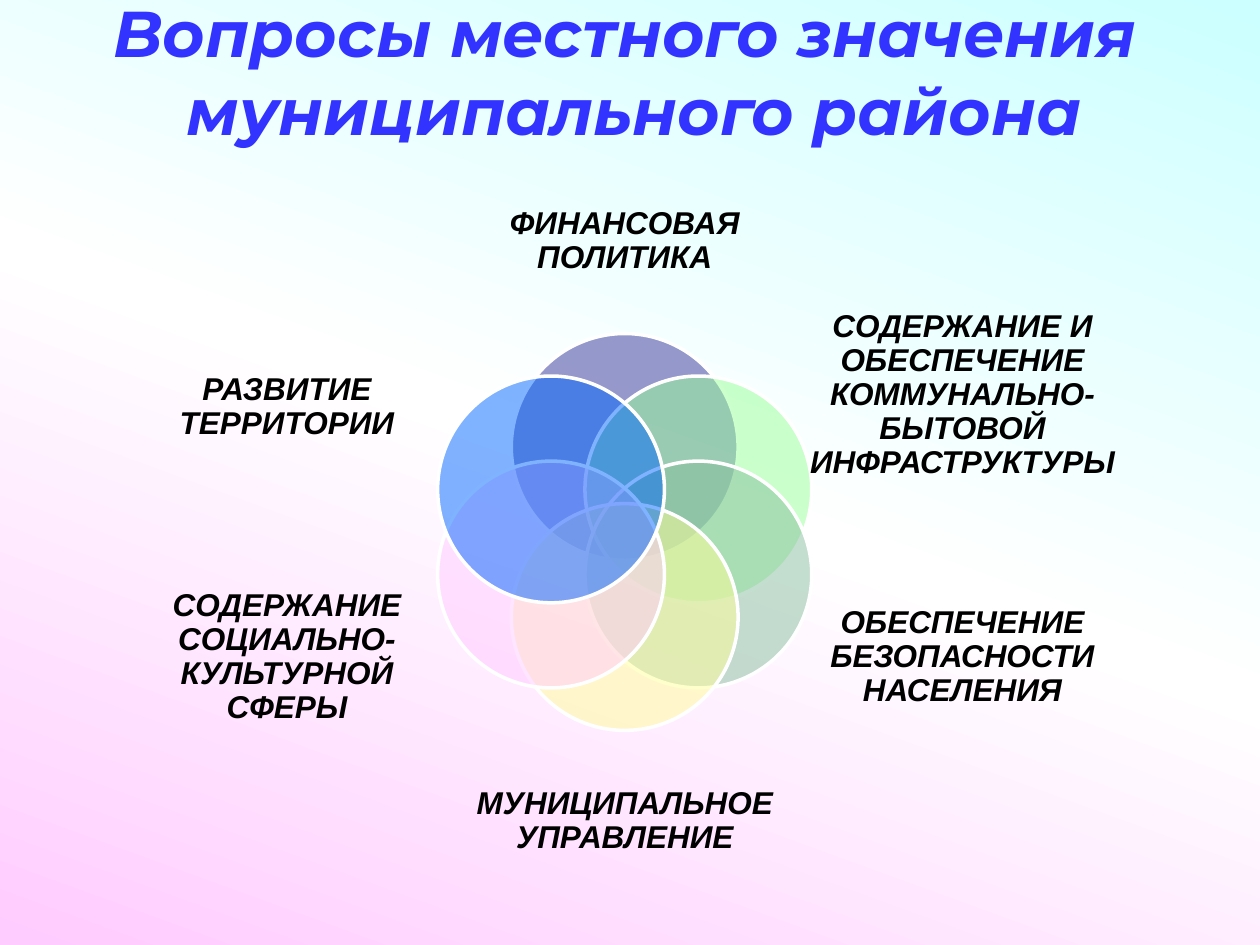
import math
import copy
import pptx
import pptx.util
import pptx.dml.color
import pptx.enum.shapes
import pptx.enum.text
import pptx.oxml
import pptx.oxml.ns

Pt = pptx.util.Pt
SIZE = 129.6
RING = 48.6
SIDE = 193

TOPICS = [
    ("ФИНАНСОВАЯ ПОЛИТИКА", "333399", 0, -166, 162, 88),
    ("СОДЕРЖАНИЕ И ОБЕСПЕЧЕНИЕ КОММУНАЛЬНО-БЫТОВОЙ ИНФРАСТРУКТУРЫ",
     "99FF99", SIDE, -78, 198, 96),
    ("ОБЕСПЕЧЕНИЕ БЕЗОПАСНОСТИ НАСЕЛЕНИЯ", "88BF9E", SIDE, 71.5, 153.4, 108),
    ("МУНИЦИПАЛЬНОЕ УПРАВЛЕНИЕ", "FFFF99", 0, 165.5, 187, 88),
    ("СОДЕРЖАНИЕ СОЦИАЛЬНО-КУЛЬТУРНОЙ СФЕРЫ", "FFCCFF", -SIDE, 71.5, 153.4, 108),
    ("РАЗВИТИЕ ТЕРРИТОРИИ", "0066FF", -SIDE, -71, 153.4, 108),
]


def color(code):
    return pptx.dml.color.RGBColor.from_string(code)


def write(shape, text, size=18, font="Arial", tint="000000", inset=None,
          lead=None, after=None):
    frame = shape.text_frame
    frame.word_wrap = True
    frame.auto_size = pptx.enum.text.MSO_AUTO_SIZE.NONE
    frame.vertical_anchor = pptx.enum.text.MSO_ANCHOR.MIDDLE
    if inset is not None:
        frame.margin_left = frame.margin_right = Pt(inset)
        frame.margin_top = frame.margin_bottom = Pt(inset)
    para = frame.paragraphs[0]
    para.text = text
    para.alignment = pptx.enum.text.PP_ALIGN.CENTER
    para.line_spacing = lead
    para.space_after = after
    for run in para.runs:
        run.font.name = font
        run.font.size = Pt(size)
        run.font.bold = run.font.italic = True
        run.font.color.rgb = color(tint)


def paint(slide):
    fill = slide.background.fill
    fill.gradient()
    stops = slide._element.find(".//" + pptx.oxml.ns.qn("a:gsLst"))
    stops.append(copy.deepcopy(stops[0]))
    for stop, place, code in zip(fill.gradient_stops, (0, 0.5, 1),
                                 ("CCFFFF", "FFFFFF", "FFCCFF")):
        stop.position = place
        stop.color.rgb = color(code)
    fill.gradient_angle = 250


def head(slide, left, top, width, height):
    title = slide.shapes.title
    title.left, title.top = Pt(left), Pt(top)
    title.width, title.height = Pt(width), Pt(height)
    write(title, "Вопросы местного значения\v муниципального района",
          size=37, font="Montserrat", tint="3333FF")


def disc(shapes, x, y, code):
    oval = shapes.add_shape(pptx.enum.shapes.MSO_SHAPE.OVAL, Pt(x - SIZE / 2),
                            Pt(y - SIZE / 2), Pt(SIZE), Pt(SIZE))
    oval.shadow.inherit = False
    oval.fill.solid()
    oval.fill.fore_color.rgb = color(code)
    tone = oval._element.spPr.find(".//" + pptx.oxml.ns.qn("a:srgbClr"))
    alpha = pptx.oxml.parse_xml(
        "<a:alpha %s val='50000'/>" % pptx.oxml.ns.nsdecls("a"))
    tone.append(alpha)
    oval.line.color.rgb = color("FFFFFF")
    oval.line.width = Pt(2)


def venn(slide, left, top, width, height):
    shapes = slide.shapes.add_group_shape().shapes
    x, y = left + width / 2, top + height / 2
    for i, (text, code, dx, dy, wide, high) in enumerate(TOPICS):
        turn = math.radians(60 * i - 90)
        disc(shapes, x + RING * math.cos(turn), y + RING * math.sin(turn), code)
        label = shapes.add_textbox(Pt(x + dx - wide / 2), Pt(y + dy - high / 2),
                                   Pt(wide), Pt(high))
        write(label, text, inset=0, lead=0.9, after=Pt(6.3))


def main():
    deck = pptx.Presentation()
    deck.slide_width, deck.slide_height = Pt(720), Pt(540)
    slide = deck.slides.add_slide(deck.slide_layouts[5])
    paint(slide)
    head(slide, 36.7, 3.6, 640.8, 73.4)
    venn(slide, 88, 94, 538, 420)
    deck.save("out.pptx")


if __name__ == "__main__":
    main()
